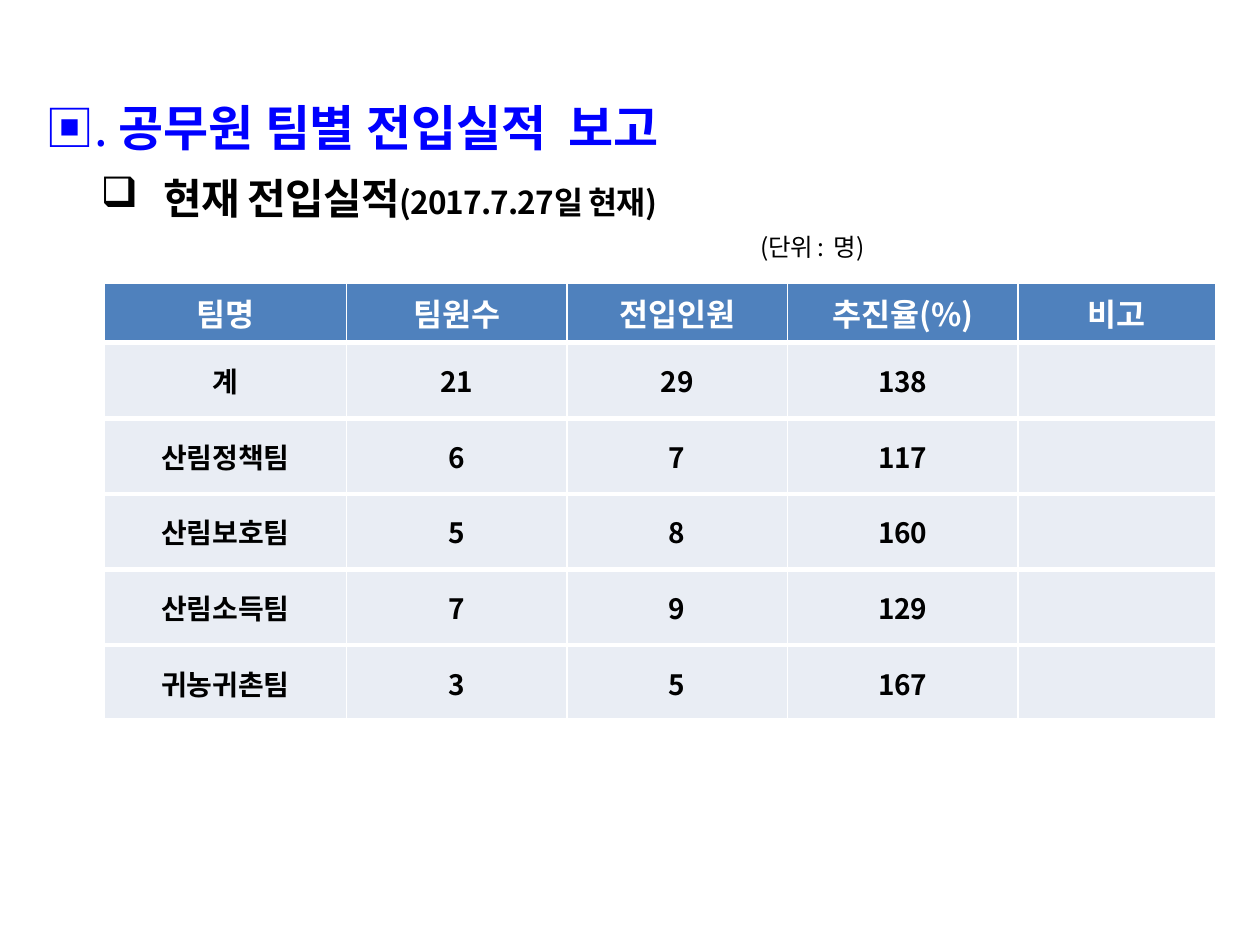
from lxml.etree import SubElement
from pptx import Presentation
from pptx.dml.color import RGBColor
from pptx.enum.text import MSO_ANCHOR as Anchor, MSO_AUTO_SIZE as AutoSize, PP_ALIGN as Align
from pptx.oxml import parse_xml
from pptx.oxml.ns import nsdecls, qn
from pptx.util import Inches, Pt

FONT = "Noto Sans CJK KR"
COLORS = {"title": "0000FF", "text": "000000", "header": "4F81BD",
          "body": "E9EDF4", "white": "FFFFFF"}
ROWS = [
    ["팀명", "팀원수", "전입인원", "추진율(%)", "비고"],
    ["계", "21", "29", "138", ""],
    ["산림정책팀", "6", "7", "117", ""],
    ["산림보호팀", "5", "8", "160", ""],
    ["산림소득팀", "7", "9", "129", ""],
    ["귀농귀촌팀", "3", "5", "167", ""],
]
COLUMN_WIDTHS = [1.92, 1.75, 1.75, 1.83, 1.57]
HEADER_HEIGHT, ROW_HEIGHT = 0.47, 0.6


def add_text(para, text, size, color="text", bold=True, spacing=None):
    """Append a run; spacing is the extra letter spacing in points."""
    span = para.add_run()
    span.text = text
    span.font.name = FONT
    span.font.size = Pt(size)
    span.font.bold = bold
    span.font.color.rgb = RGBColor.from_string(COLORS[color])
    properties = span.font._element
    SubElement(properties, qn("a:ea"), typeface=FONT)
    if spacing is not None:
        properties.set("spc", str(int(spacing * 100)))


def prepare(box, left, top, width, height, align=Align.LEFT):
    """Place a text shape, centre it vertically and return its paragraph."""
    box.left, box.top, box.width, box.height = map(Inches, (left, top, width, height))
    frame = box.text_frame
    frame.word_wrap = True
    frame.auto_size = AutoSize.NONE
    frame.vertical_anchor = Anchor.MIDDLE
    para = frame.paragraphs[0]
    para.alignment = align
    return para


deck = Presentation()
deck.slide_width, deck.slide_height = Inches(10), Inches(7.5)
page = deck.slides.add_slide(deck.slide_layouts[5])

# Headings
title = prepare(page.shapes.title, 0.26, 0.66, 9.4, 0.7)
add_text(title, "▣. ", 28, "title", bold=False)
add_text(title, "공무원 팀별 전입실적  보고", 28, "title")

subtitle = prepare(page.shapes.add_textbox(0, 0, 0, 0), 0.7, 1.27, 8.9, 0.6)
add_text(subtitle, "현재 전입실적", 24, spacing=-0.5)
add_text(subtitle, "(2017.7.27일 현재)", 18, spacing=-0.5)
indent = subtitle._p.get_or_add_pPr()
indent.set("marL", str(Inches(0.5)))
indent.set("indent", str(Inches(-0.5)))
SubElement(indent, qn("a:buChar"), char="❑")

unit = prepare(page.shapes.add_textbox(0, 0, 0, 0), 4.96, 1.75, 2, 0.42, Align.RIGHT)
add_text(unit, "(단위 :  명)", 14, bold=False, spacing=-0.5)

# Results by team
table = page.shapes.add_table(
    len(ROWS), len(COLUMN_WIDTHS), Inches(0.83), Inches(2.25),
    Inches(sum(COLUMN_WIDTHS)),
    Inches(HEADER_HEIGHT + ROW_HEIGHT * (len(ROWS) - 1))).table
for column, width in zip(table.columns, COLUMN_WIDTHS):
    column.width = Inches(width)

for row_index, values in enumerate(ROWS):
    is_header = row_index == 0
    table.rows[row_index].height = Inches(HEADER_HEIGHT if is_header else ROW_HEIGHT)
    borders = {"lnL": 1, "lnR": 1, "lnT": 1 if is_header else 3, "lnB": 3}
    for column_index, value in enumerate(values):
        cell = table.cell(row_index, column_index)
        cell.vertical_anchor = Anchor.MIDDLE
        for side, weight in borders.items():
            cell._tc.get_or_add_tcPr().append(parse_xml(
                f'<a:{side} {nsdecls("a")} w="{Pt(weight)}"><a:solidFill>'
                f'<a:srgbClr val="{COLORS["white"]}"/></a:solidFill></a:{side}>'))
        cell.fill.solid()
        cell.fill.fore_color.rgb = RGBColor.from_string(
            COLORS["header" if is_header else "body"])
        if value:
            para = cell.text_frame.paragraphs[0]
            para.alignment = Align.CENTER
            add_text(para, value, 18 if is_header else 16,
                     "white" if is_header else "text")

deck.save("out.pptx")
